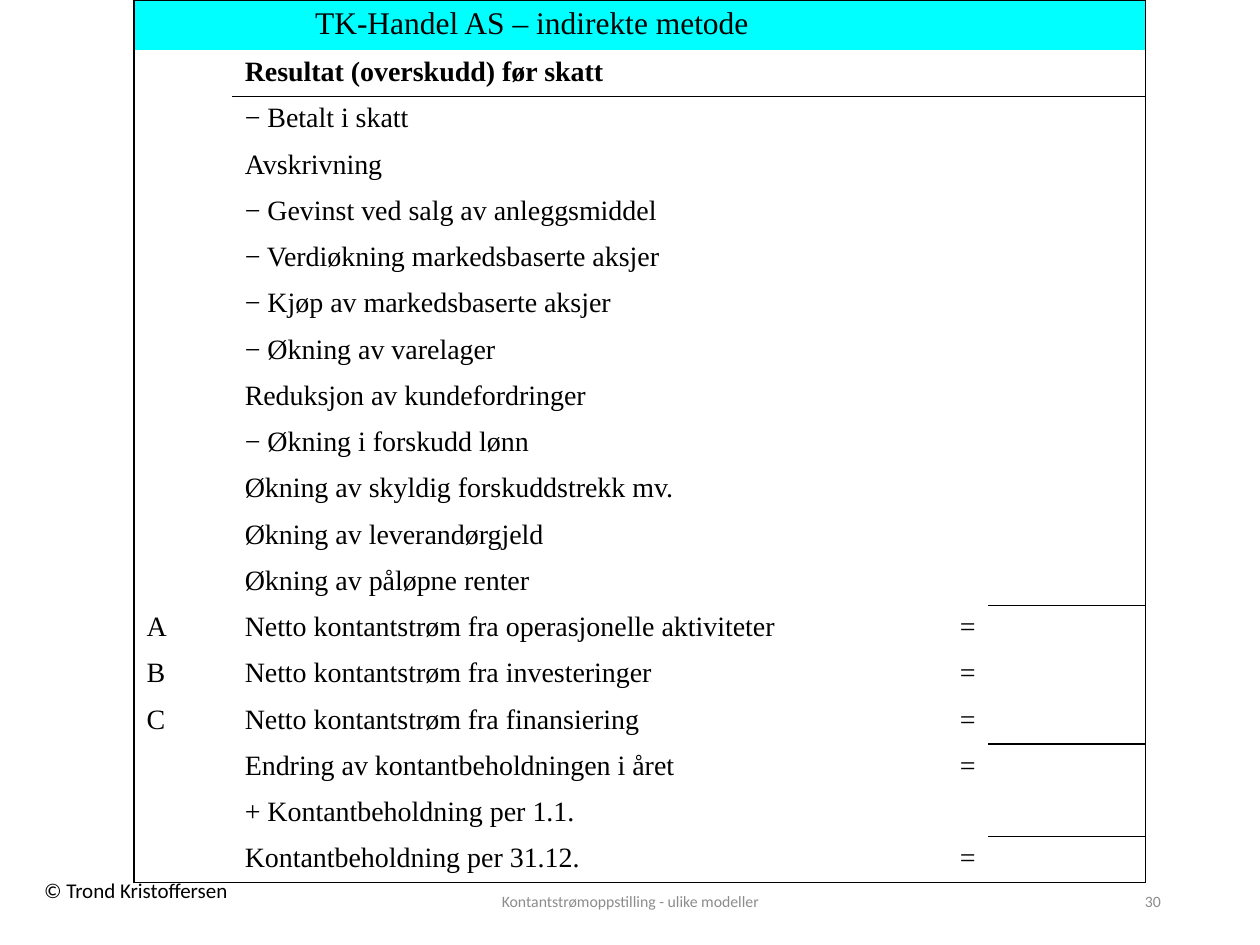
from lxml.etree import SubElement
from pptx import Presentation
from pptx.dml.color import RGBColor
from pptx.enum.text import MSO_ANCHOR, PP_ALIGN
from pptx.oxml.ns import qn
from pptx.util import Cm, Pt

BLACK = RGBColor(0x00, 0x00, 0x00)
GREY = RGBColor(0x8C, 0x8C, 0x8C)
CYAN = RGBColor(0x00, 0xFF, 0xFF)

TITLE = "TK-Handel AS – indirekte metode"
ITEMS = [  # mark, description, sign
    ("", "Resultat (overskudd) før skatt", ""),
    ("", "− Betalt i skatt", ""),
    ("", "Avskrivning", ""),
    ("", "− Gevinst ved salg av anleggsmiddel", ""),
    ("", "− Verdiøkning markedsbaserte aksjer", ""),
    ("", "− Kjøp av markedsbaserte aksjer", ""),
    ("", "− Økning av varelager", ""),
    ("", "Reduksjon av kundefordringer", ""),
    ("", "− Økning i forskudd lønn", ""),
    ("", "Økning av skyldig forskuddstrekk mv.", ""),
    ("", "Økning av leverandørgjeld", ""),
    ("", "Økning av påløpne renter", ""),
    ("A", "Netto kontantstrøm fra operasjonelle aktiviteter", "="),
    ("B", "Netto kontantstrøm fra investeringer", "="),
    ("C", "Netto kontantstrøm fra finansiering", "="),
    ("", "Endring av kontantbeholdningen i året", "="),
    ("", "+ Kontantbeholdning per 1.1.", ""),
    ("", "Kontantbeholdning per 31.12.", "="),
]
ROWS = [(TITLE, "", "", "")] + [(*item, "") for item in ITEMS]
RULES_BELOW = {1: 1, 12: 3, 15: 3, 17: 3}  # row: first column of the rule
COLUMN_WIDTHS = [1.98, 14.07, 1.17, 3.17]
TABLE_LEFT, TABLE_HEIGHT, TITLE_HEIGHT = 2.7, 17.78, 1.0
FOOTERS = [  # text, left, top, width, height, format
    ("© Trond Kristoffersen", 0.64, 17.57, 4.32, 0.77,
     dict(size=12, anchor=MSO_ANCHOR.TOP, wrap=False)),
    ("Kontantstrømoppstilling - ulike modeller", 8.41, 17.65, 8.59, 1.02,
     dict(size=9, color=GREY, align=PP_ALIGN.CENTER)),
    ("30", 17.93, 17.65, 5.72, 1.02,
     dict(size=9, color=GREY, align=PP_ALIGN.RIGHT)),
]


def write(frame, text, size=16, font="Calibri", color=BLACK, bold=False,
          align=PP_ALIGN.LEFT, anchor=MSO_ANCHOR.MIDDLE, wrap=True):
    frame.word_wrap = wrap
    frame.vertical_anchor = anchor
    paragraph = frame.paragraphs[0]
    paragraph.alignment = align
    if not text:  # keeps an empty cell as low as its row
        SubElement(paragraph._p, qn("a:endParaRPr"), sz=str(size * 100))
        return
    run = paragraph.add_run()
    run.text = text
    run.font.size, run.font.name, run.font.bold = Pt(size), font, bold
    run.font.color.rgb = color


def set_borders(cell, drawn):
    """Draw the sides named in drawn and clear the others."""
    properties = cell._tc.get_or_add_tcPr()
    for side in "LRTB":
        line = SubElement(properties, qn(f"a:ln{side}"), w=str(Pt(1)))
        if side in drawn:
            fill = SubElement(line, qn("a:solidFill"))
            SubElement(fill, qn("a:srgbClr"), val=str(BLACK))
        else:
            SubElement(line, qn("a:noFill"))


def sides_of(row, column):
    last_row, last_column = len(ROWS) - 1, len(COLUMN_WIDTHS) - 1
    edges = {
        "L": column == 0,
        "R": column == last_column,
        "T": row == 0 or column >= RULES_BELOW.get(row - 1, 9),
        "B": row == last_row or column >= RULES_BELOW.get(row, 9),
    }
    return [side for side, drawn in edges.items() if drawn]


def add_cash_flow_table(slide):
    table = slide.shapes.add_table(
        len(ROWS), len(COLUMN_WIDTHS), Cm(TABLE_LEFT), Cm(0),
        Cm(sum(COLUMN_WIDTHS)), Cm(TABLE_HEIGHT)).table
    table.first_row = table.horz_banding = False
    for column, width in zip(table.columns, COLUMN_WIDTHS):
        column.width = Cm(width)
    item_height = (TABLE_HEIGHT - TITLE_HEIGHT) / len(ITEMS)

    for r, texts in enumerate(ROWS):
        is_title = r == 0
        table.rows[r].height = Cm(TITLE_HEIGHT if is_title else item_height)
        for c, text in enumerate(texts):
            cell = table.cell(r, c)
            align = PP_ALIGN.RIGHT if c == 2 else PP_ALIGN.LEFT
            write(cell.text_frame, text, size=18 if is_title else 16,
                  font="Times New Roman", bold=r == 1,
                  align=PP_ALIGN.CENTER if is_title else align,
                  anchor=MSO_ANCHOR.TOP)
            set_borders(cell, sides_of(r, c))
            if is_title:
                cell.fill.solid()
                cell.fill.fore_color.rgb = CYAN
            else:
                cell.fill.background()
    table.cell(0, 0).merge(table.cell(0, 1))


def main():
    deck = Presentation()
    deck.slide_width, deck.slide_height = Cm(25.4), Cm(19.05)
    slide = deck.slides.add_slide(deck.slide_layouts[6])
    for text, left, top, width, height, text_format in FOOTERS:
        box = slide.shapes.add_textbox(Cm(left), Cm(top), Cm(width), Cm(height))
        write(box.text_frame, text, **text_format)
    add_cash_flow_table(slide)
    deck.save("out.pptx")


if __name__ == "__main__":
    main()
